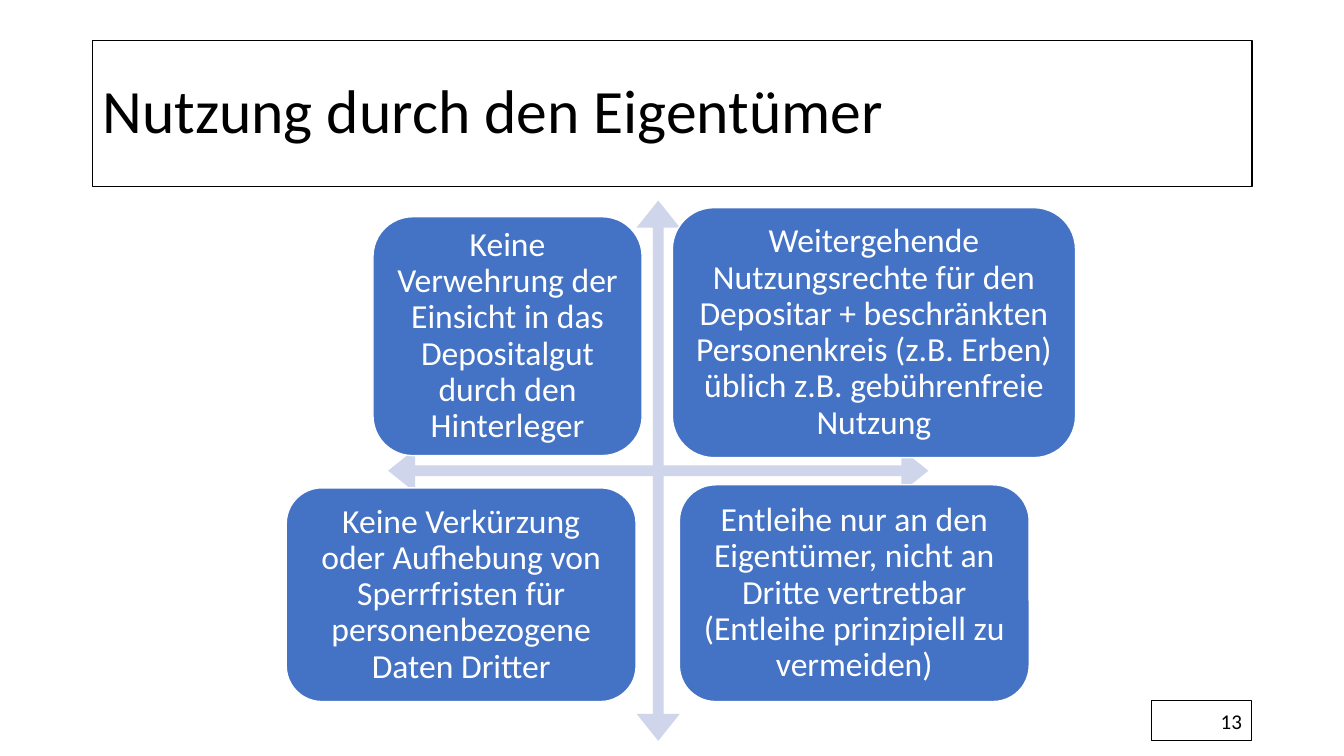
from dataclasses import dataclass

from pptx import Presentation
from pptx.dml.color import RGBColor
from pptx.enum.shapes import MSO_SHAPE
from pptx.enum.text import MSO_ANCHOR, PP_ALIGN
from pptx.shapes.autoshape import Shape
from pptx.slide import Slide
from pptx.util import Emu, Inches, Pt

RECTANGLE = MSO_SHAPE.RECTANGLE
ROUNDED = MSO_SHAPE.ROUNDED_RECTANGLE
CROSS_ARROW = MSO_SHAPE.QUAD_ARROW
LEFT, CENTER, RIGHT = PP_ALIGN.LEFT, PP_ALIGN.CENTER, PP_ALIGN.RIGHT
MIDDLE = MSO_ANCHOR.MIDDLE

PAGE_WIDTH, PAGE_HEIGHT = Inches(13.333), Inches(7.5)
FONT = "Calibri"
COLORS = {
    "black": "000000",
    "white": "FFFFFF",
    "quadrant": "4472C4",
    "arrow": "CFD5EA",
}


@dataclass(frozen=True)
class Area:
    """Place and size in percent of the slide's width and height."""

    left: float
    top: float
    width: float
    height: float


@dataclass(frozen=True)
class Style:
    fill: str
    line: str
    line_width: float
    text: str
    size: int
    align: PP_ALIGN
    spacing: float
    inset: float


@dataclass(frozen=True)
class Panel:
    area: Area
    lines: tuple[str, ...]


TITLE_STYLE = Style("white", "black", 1, "black", 44, LEFT, 0.9, 0.1)
NUMBER_STYLE = Style("white", "black", 0.75, "black", 15, RIGHT, 1.0, 0.1)
QUADRANT_STYLE = Style("quadrant", "white", 1, "white", 24, CENTER, 0.9, 0.1)

TITLE = Panel(Area(6.9, 5.33, 86.25, 19.33), ("Nutzung durch den Eigentümer",))
PAGE_NUMBER = Panel(Area(85.65, 92.67, 7.5, 5.33), ("13",))
CROSS_AREA = Area(28.88, 26.53, 40.2, 71.47)
CROSS_PROPORTIONS = (0.02, 0.04, 0.05)
QUADRANTS = (
    Panel(
        Area(27.75, 28.67, 20.03, 31.6),
        ("Keine Verwehrung der Einsicht in das Depositalgut durch den Hinterleger",),
    ),
    Panel(
        Area(50.03, 27.47, 30, 33.07),
        (
            "Weitergehende Nutzungsrechte für den Depositar + beschränkten "
            "Personenkreis (z.B. Erben) üblich z.B. gebührenfreie Nutzung",
        ),
    ),
    Panel(
        Area(21.3, 64.53, 26.03, 28.27),
        (
            "Keine Verkürzung oder Aufhebung von Sperrfristen für "
            "personenbezogene Daten Dritter",
        ),
    ),
    Panel(
        Area(50.55, 64.13, 26.03, 28.67),
        (
            "Entleihe nur an den Eigentümer, nicht an Dritte vertretbar",
            "(Entleihe prinzipiell zu vermeiden)",
        ),
    ),
)


def color(name: str) -> RGBColor:
    return RGBColor.from_string(COLORS[name])


def add_filled_shape(page: Slide, kind: MSO_SHAPE, area: Area, fill: str) -> Shape:
    shape = page.shapes.add_shape(
        kind,
        Emu(round(PAGE_WIDTH * area.left / 100)),
        Emu(round(PAGE_HEIGHT * area.top / 100)),
        Emu(round(PAGE_WIDTH * area.width / 100)),
        Emu(round(PAGE_HEIGHT * area.height / 100)),
    )
    shape.shadow.inherit = False
    shape.fill.solid()
    shape.fill.fore_color.rgb = color(fill)
    return shape


def add_cross_arrow(page: Slide) -> None:
    arrow = add_filled_shape(page, CROSS_ARROW, CROSS_AREA, "arrow")
    arrow.line.fill.background()
    for index, proportion in enumerate(CROSS_PROPORTIONS):
        arrow.adjustments[index] = proportion


def add_panel(page: Slide, kind: MSO_SHAPE, panel: Panel, style: Style) -> None:
    box = add_filled_shape(page, kind, panel.area, style.fill)
    box.line.color.rgb = color(style.line)
    box.line.width = Pt(style.line_width)

    frame = box.text_frame
    frame.word_wrap = True
    frame.vertical_anchor = MIDDLE
    frame.margin_left = frame.margin_right = Inches(style.inset)
    frame.margin_top = frame.margin_bottom = Inches(style.inset / 2)

    para = frame.paragraphs[0]
    para.alignment = style.align
    para.line_spacing = style.spacing
    for index, line in enumerate(panel.lines):
        if index:
            para.add_line_break()
        span = para.add_run()
        span.text = line
        span.font.name = FONT
        span.font.size = Pt(style.size)
        span.font.color.rgb = color(style.text)


def main() -> None:
    deck = Presentation()
    deck.slide_width, deck.slide_height = PAGE_WIDTH, PAGE_HEIGHT
    page = deck.slides.add_slide(deck.slide_layouts[6])

    add_panel(page, RECTANGLE, TITLE, TITLE_STYLE)
    add_panel(page, RECTANGLE, PAGE_NUMBER, NUMBER_STYLE)
    add_cross_arrow(page)
    for quadrant in QUADRANTS:
        add_panel(page, ROUNDED, quadrant, QUADRANT_STYLE)

    deck.save("out.pptx")


if __name__ == "__main__":
    main()
